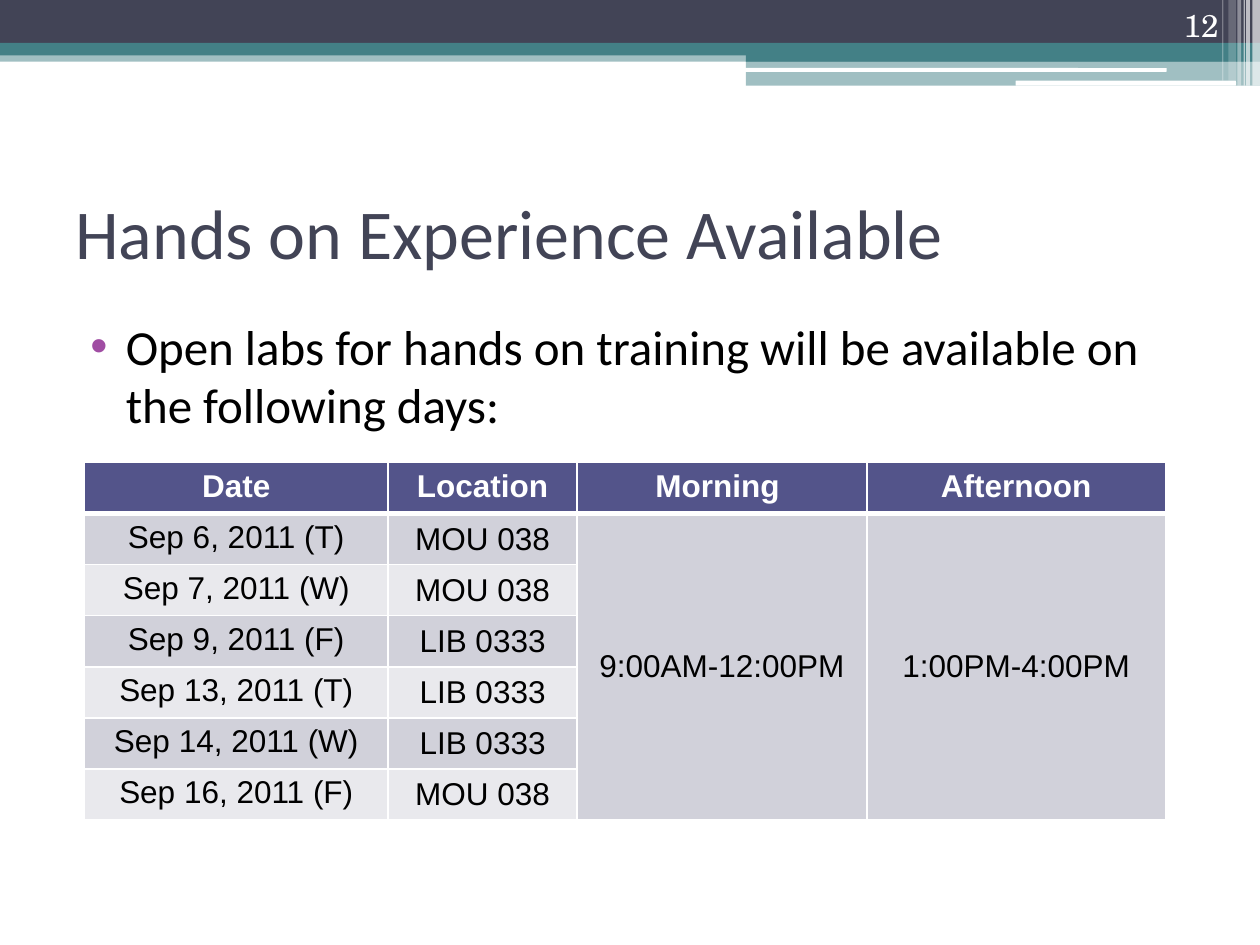
"""Build the slide that lists the open lab days for hands on training."""
from dataclasses import dataclass

from pptx import Presentation
from pptx.dml.color import RGBColor
from pptx.enum.shapes import MSO_SHAPE as Shape
from pptx.enum.text import MSO_ANCHOR as Anchor, PP_ALIGN as Align
from pptx.oxml import parse_xml
from pptx.oxml.ns import nsdecls
from pptx.util import Inches, Pt


@dataclass(frozen=True)
class Theme:
    dark: str = "424456"
    teal: str = "438086"
    accent: str = "A04DA3"
    header: str = "53548A"
    bands: tuple = ("D1D1DA", "E9E9ED")
    white: str = "FFFFFF"
    black: str = "000000"
    text_font: str = "Calibri"
    table_font: str = "Arial"
    number_font: str = "TeX Gyre Schola"
    title_size: int = 40
    body_size: int = 28
    small_size: int = 18


class SlideBuilder:
    def __init__(self, slide, theme):
        self.slide = slide
        self.theme = theme

    def bar(self, left, top, width, height, color, opacity=100, kind=Shape.RECTANGLE):
        shape = self.slide.shapes.add_shape(
            kind, Inches(left), Inches(top), Inches(width), Inches(height))
        shape.shadow.inherit = False
        shape.line.fill.background()
        shape.fill.solid()
        shape.fill.fore_color.rgb = RGBColor.from_string(color)
        if opacity < 100:
            color_element = shape._element.spPr.find(".//{*}srgbClr")
            color_element.append(parse_xml(
                f'<a:alpha {nsdecls("a")} val="{opacity * 1000}"/>'))

    def style(self, paragraph, font, size, color, align=Align.LEFT, bold=False):
        paragraph.alignment = align
        paragraph.font.name = font
        paragraph.font.size = Pt(size)
        paragraph.font.bold = bold
        paragraph.font.color.rgb = RGBColor.from_string(color)

    def text(self, content, left, top, width, height, font, size, color,
             anchor=Anchor.TOP, align=Align.LEFT):
        box = self.slide.shapes.add_textbox(
            Inches(left), Inches(top), Inches(width), Inches(height))
        frame = box.text_frame
        frame.word_wrap = True
        frame.vertical_anchor = anchor
        paragraph = frame.paragraphs[0]
        paragraph.text = content
        self.style(paragraph, font, size, color, align)
        return paragraph

    def bullet(self, paragraph, margin, indent):
        paragraph.space_before = Pt(3)
        properties = paragraph._p.get_or_add_pPr()
        properties.set("marL", str(Inches(margin)))
        properties.set("indent", str(Inches(indent)))
        marks = (f'<a:buClr {nsdecls("a")}><a:srgbClr val="{self.theme.accent}"/></a:buClr>',
                 f'<a:buFont {nsdecls("a")} typeface="Arial"/>',
                 f'<a:buChar {nsdecls("a")} char="•"/>')
        for mark in marks:
            properties.insert_element_before(parse_xml(mark), "a:tabLst", "a:defRPr")

    def borders(self, cell, top, bottom):
        properties = cell._tc.get_or_add_tcPr()
        widths = {"lnL": 1, "lnR": 1, "lnT": top, "lnB": bottom}
        for position, (side, width) in enumerate(widths.items()):
            properties.insert(position, parse_xml(
                f'<a:{side} {nsdecls("a")} w="{Pt(width)}"><a:solidFill>'
                f'<a:srgbClr val="{self.theme.white}"/></a:solidFill></a:{side}>'))

    def table(self, rows, left, top, widths, height):
        theme = self.theme
        frame = self.slide.shapes.add_table(
            len(rows), len(widths), Inches(left), Inches(top),
            Inches(sum(widths)), Inches(height))
        table = frame.table
        for column, width in zip(table.columns, widths):
            column.width = Inches(width)
        for row_index, row in enumerate(rows):
            is_header = row_index == 0
            band = theme.header if is_header else theme.bands[(row_index - 1) % 2]
            for column_index in range(len(widths)):
                cell = table.cell(row_index, column_index)
                cell.fill.solid()
                cell.fill.fore_color.rgb = RGBColor.from_string(band)
                self.borders(cell, 3 if row_index == 1 else 1, 3 if is_header else 1)
                if column_index < len(row):
                    cell.text = row[column_index]
                    centred = column_index > 0 and not is_header
                    cell.vertical_anchor = Anchor.MIDDLE if centred else Anchor.TOP
                    self.style(cell.text_frame.paragraphs[0], theme.table_font,
                               theme.small_size, theme.white if is_header else theme.black,
                               Align.CENTER, is_header)
        return table


def main():
    presentation = Presentation()
    presentation.slide_width, presentation.slide_height = Inches(10), Inches(7.5)
    theme = Theme()
    builder = SlideBuilder(
        presentation.slides.add_slide(presentation.slide_layouts[6]), theme)

    builder.bar(0, 0.4, 10, 0.09, theme.teal, 50)
    builder.bar(0, 0, 10, 0.34, theme.dark)
    builder.bar(0, 0.34, 10, 0.1, theme.teal)
    builder.bar(5.92, 0.39, 4.08, 0.1, theme.teal)
    builder.bar(5.92, 0.48, 4.08, 0.2, theme.teal, 50)
    builder.bar(5.91, 0.54, 3.35, 0.03, theme.white, kind=Shape.ROUNDED_RECTANGLE)
    builder.bar(8.06, 0.64, 1.75, 0.04, theme.white, kind=Shape.ROUNDED_RECTANGLE)
    stripes = ((9.94, 0.06, 0.68, 65), (9.89, 0.03, 0.68, 65), (9.87, 0.01, 0.68, 60),
               (9.82, 0.03, 0.68, 40), (9.75, 0.06, 0.64, 20), (9.7, 0.01, 0.64, 30))
    for left, width, height, opacity in stripes:
        builder.bar(left, 0, width, height, theme.white, opacity)

    builder.text("Hands on Experience Available", 0.5, 1.25, 9, 1.17,
                 theme.text_font, theme.title_size, theme.dark, Anchor.MIDDLE)
    body = builder.text(
        "Open labs for hands on training will be available on the following days:",
        0.5, 2.46, 9, 4.73, theme.text_font, theme.body_size, theme.black)
    builder.bullet(body, 0.4, -0.28)
    builder.text("12", 8.94, 0, 0.83, 0.4, theme.number_font, theme.small_size,
                 theme.white, Anchor.BOTTOM, Align.RIGHT)

    rows = (("Date", "Location", "Morning ", "Afternoon"),
            ("Sep 6, 2011 (T)", "MOU 038", "9:00AM-12:00PM", "1:00PM-4:00PM"),
            ("Sep 7, 2011 (W)", "MOU 038"),
            ("Sep 9, 2011 (F)", "LIB 0333"),
            ("Sep 13, 2011 (T)", "LIB 0333"),
            ("Sep 14, 2011 (W)", "LIB 0333"),
            ("Sep 16, 2011 (F)", "MOU 038"))
    table = builder.table(rows, 0.67, 3.67, (2.41, 1.5, 2.3, 2.37), 2.84)
    for column in (2, 3):
        table.cell(1, column).merge(table.cell(len(rows) - 1, column))

    presentation.save("out.pptx")


if __name__ == "__main__":
    main()
